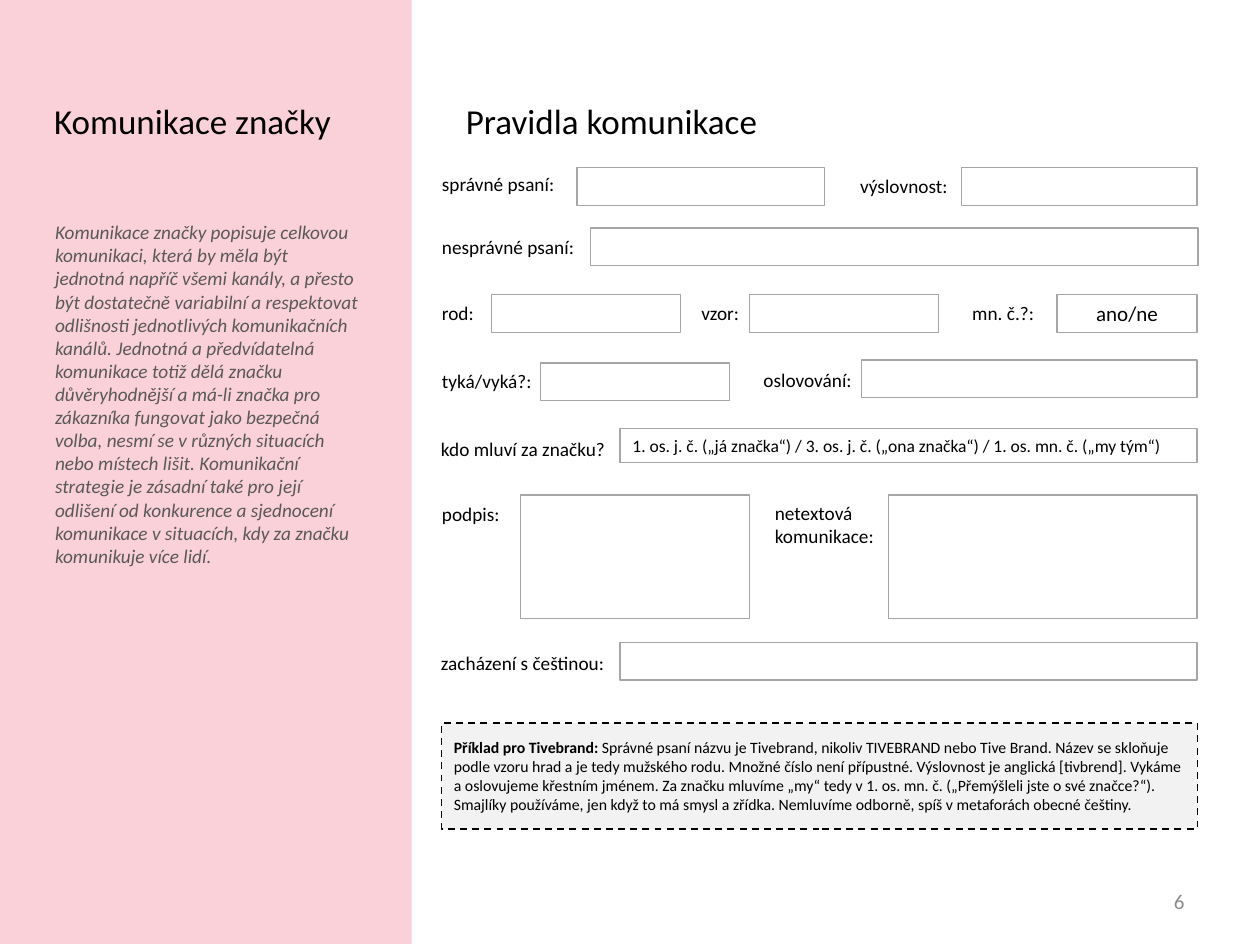
from dataclasses import dataclass

from lxml import etree
from pptx import Presentation
from pptx import util as u
from pptx.dml.color import RGBColor
from pptx.enum import dml, shapes, text
from pptx.oxml.ns import qn

FONT = "Calibri"
COLORS = {
    "pink": "F6A2B5",
    "black": "000000",
    "intro": "595959",
    "number": "8C8C8C",
    "border": "A6A6A6",
    "example": "F2F2F2",
}


@dataclass(frozen=True)
class Area:
    """Position and size in centimetres."""
    left: float
    top: float
    width: float
    height: float = 0.76

    def lengths(self) -> list:
        return [u.Cm(v) for v in (self.left, self.top, self.width, self.height)]


@dataclass(frozen=True)
class Label:
    caption: str
    left: float
    top: float
    width: float
    height: float = 0.74


@dataclass(frozen=True)
class Field:
    area: Area
    value: str = ""
    size: float = 12
    align: text.PP_ALIGN = text.PP_ALIGN.LEFT


LABELS = [
    Label("správné psaní:", 8.66, 3.35, 3.43),
    Label("výslovnost:", 17.09, 3.38, 2.79),
    Label("nesprávné psaní:", 8.66, 4.62, 4.04),
    Label("rod:", 8.66, 5.94, 1.35),
    Label("vzor:", 13.89, 5.94, 1.5),
    Label("mn. č.?:", 19.35, 5.94, 2.11),
    Label("tyká/vyká?:", 8.66, 7.32, 2.44),
    Label("oslovování:", 15.14, 7.29, 2.44),
    Label("kdo mluví za značku?", 8.64, 8.69, 4.04),
    Label("podpis:", 8.66, 10.01, 2.44),
    Label("netextová komunikace:", 15.37, 9.98, 2.74, 1.19),
    Label("zacházení s češtinou:", 8.64, 13, 4.04),
]

FIELDS = [
    Field(Area(11.63, 3.38, 5)),
    Field(Area(19.38, 3.38, 4.75)),
    Field(Area(11.91, 4.6, 12.24)),
    Field(Area(9.91, 5.94, 3.81)),
    Field(Area(15.11, 5.94, 3.81)),
    Field(Area(21.31, 5.94, 2.82), "ano/ne", 12, text.PP_ALIGN.CENTER),
    Field(Area(10.9, 7.32, 3.81)),
    Field(Area(17.37, 7.26, 6.76)),
    Field(Area(12.5, 8.64, 11.63, 0.69),
          "1. os. j. č. („já značka“) / 3. os. j. č. („ona značka“) / "
          "1. os. mn. č. („my tým“)", 10),
    Field(Area(10.49, 9.98, 4.62, 2.49)),
    Field(Area(17.91, 9.98, 6.22, 2.49)),
    Field(Area(12.5, 12.95, 11.63)),
]

INTRO = (
    "Komunikace značky popisuje celkovou komunikaci, která by měla být jednotná "
    "napříč všemi kanály, a přesto být dostatečně variabilní a respektovat "
    "odlišnosti jednotlivých komunikačních kanálů. Jednotná a předvídatelná "
    "komunikace totiž dělá značku důvěryhodnější a má-li značka pro zákazníka "
    "fungovat jako bezpečná volba, nesmí se v různých situacích nebo místech lišit. "
    "Komunikační strategie je zásadní také pro její odlišení od konkurence a "
    "sjednocení komunikace v situacích, kdy za značku komunikuje více lidí."
)
EXAMPLE = (
    "Správné psaní názvu je Tivebrand, nikoliv TIVEBRAND nebo Tive Brand. Název se "
    "skloňuje podle vzoru hrad a je tedy mužského rodu. Množné číslo není přípustné. "
    "Výslovnost je anglická [tivbrend]. Vykáme a oslovujeme křestním jménem. Za "
    "značku mluvíme „my“ tedy v 1. os. mn. č. („Přemýšleli jste o své značce?“). "
    "Smajlíky používáme, jen když to má smysl a zřídka. Nemluvíme odborně, spíš v "
    "metaforách obecné češtiny."
)


def rgb(name: str) -> RGBColor:
    return RGBColor.from_string(COLORS[name])


def add_run(p, words: str, size: float, color: str = "black",
            bold: bool = False, italic: bool = False) -> None:
    r = p.add_run()
    r.text = words
    r.font.name = FONT
    r.font.size = u.Pt(size)
    r.font.bold = bold
    r.font.italic = italic
    r.font.color.rgb = rgb(color)


def prepare(sp, align=text.PP_ALIGN.LEFT, anchor=text.MSO_ANCHOR.TOP):
    """Set up the text frame and return its first paragraph."""
    tf = sp.text_frame
    tf.word_wrap = True
    tf.vertical_anchor = anchor
    p = tf.paragraphs[0]
    p.alignment = align
    return p


def add_text(s, area: Area, words: str, size: float, color: str = "black",
             italic: bool = False, **layout):
    p = prepare(s.shapes.add_textbox(*area.lengths()), **layout)
    add_run(p, words, size, color, italic=italic)
    return p


def add_rect(s, area: Area, fill: str = "", line: str = "", width: float = 0.75):
    sp = s.shapes.add_shape(shapes.MSO_SHAPE.RECTANGLE, *area.lengths())
    sp.shadow.inherit = False
    if fill:
        sp.fill.solid()
        sp.fill.fore_color.rgb = rgb(fill)
    else:
        sp.fill.background()
    if line:
        sp.line.color.rgb = rgb(line)
        sp.line.width = u.Pt(width)
    else:
        sp.line.fill.background()
    return sp


def add_field(s, field: Field) -> None:
    sp = add_rect(s, field.area, line="border")
    if field.value:
        add_run(prepare(sp, field.align), field.value, field.size)


def main() -> None:
    prs = Presentation()
    prs.slide_width, prs.slide_height = u.Cm(25.4), u.Cm(19.05)
    s = prs.slides.add_slide(prs.slide_layouts[6])

    # Half-transparent side panel
    panel = add_rect(s, Area(0, -0.02, 8.3, 19.05), "pink")
    color = panel.fill._xPr.find(qn("a:solidFill"))[0]
    etree.SubElement(color, qn("a:alpha")).set("val", "50000")

    # Headings and introduction
    heading = add_text(s, Area(0.84, 1.88, 6.65, 1.27), "Komunikace značky", 20)
    intro = add_text(s, Area(0.86, 4.32, 6.65, 13), INTRO, 11, "intro", italic=True)
    for p in (heading, intro):
        p.space_before, p.space_after = u.Pt(8), u.Pt(2)
    add_text(s, Area(9.14, 1.88, 14.99, 1.22), "Pravidla komunikace", 20)

    # Form
    for label in LABELS:
        add_text(s, Area(label.left, label.top, label.width, label.height),
                 label.caption, 11)
    for field in FIELDS:
        add_field(s, field)

    # Worked example
    example = add_rect(s, Area(8.9, 14.58, 15.24, 2.13), "example", "black", 1)
    example.line.dash_style = dml.MSO_LINE.DASH
    p = prepare(example, anchor=text.MSO_ANCHOR.MIDDLE)
    add_run(p, "Příklad pro Tivebrand: ", 9, bold=True)
    add_run(p, EXAMPLE, 9)

    # Page number
    add_text(s, Area(18.21, 17.65, 5.92, 1.02), "6", 12, "number",
             align=text.PP_ALIGN.RIGHT, anchor=text.MSO_ANCHOR.MIDDLE)

    prs.save("out.pptx")


if __name__ == "__main__":
    main()
